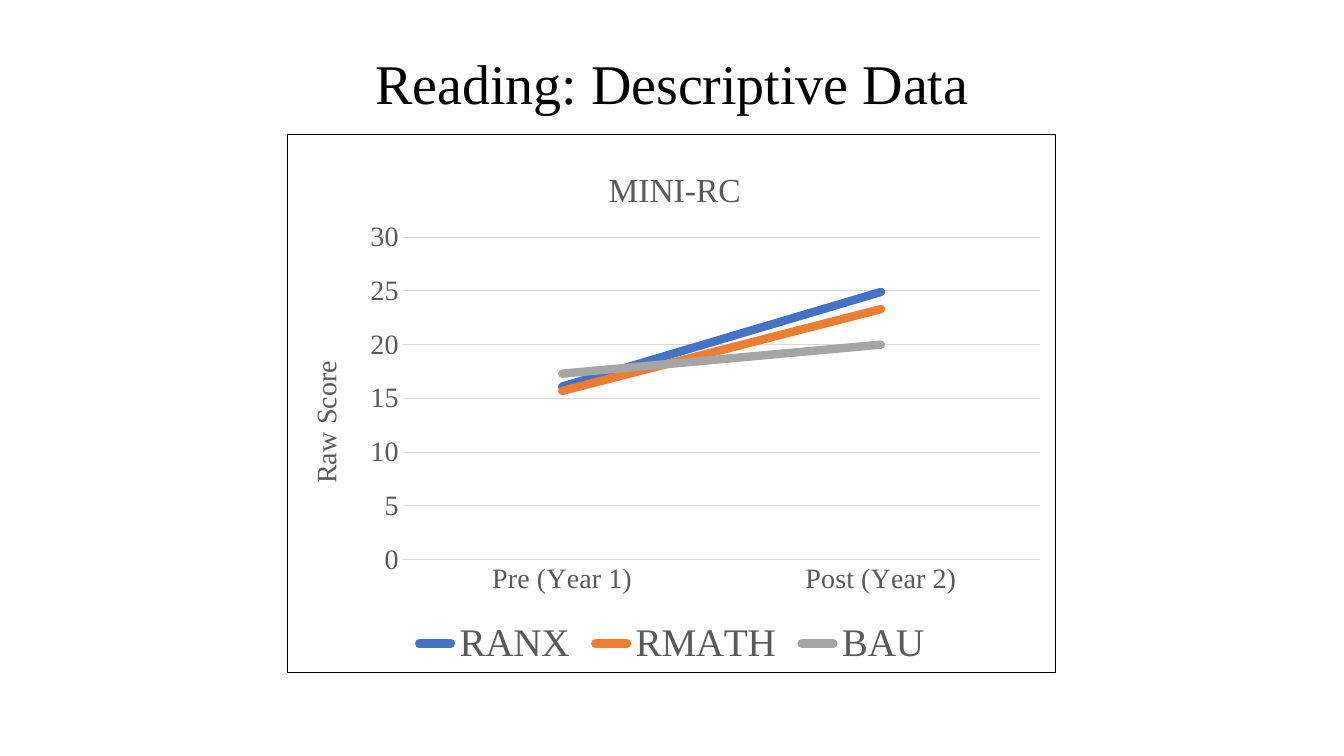
from dataclasses import dataclass

from lxml import etree
from pptx import Presentation
from pptx.chart.data import CategoryChartData
from pptx.dml.color import RGBColor
from pptx.enum import chart as ch, text
from pptx.oxml import ns, parse_xml
from pptx.util import Pt


@dataclass(frozen=True)
class Theme:
    font: str = "Times New Roman"
    black: str = "000000"
    label: str = "595959"
    grid: str = "D9D9D9"
    series: tuple = ("4472C4", "ED7D31", "A5A5A5")
    title_size: int = 40
    chart_title_size: int = 24
    axis_size: int = 20
    legend_size: int = 28
    thin: float = 0.75
    thick: float = 6


THEME = Theme()
CATEGORIES = ("Pre (Year 1)", "Post (Year 2)")
SCORES = {"RANX": (16.1, 24.9), "RMATH": (15.7, 23.3), "BAU": (17.3, 20)}


def style_font(font, size, color):
    font.name = THEME.font
    font.size = Pt(size)
    font.bold = False
    font.color.rgb = RGBColor.from_string(color)


def style_line(line, color, width):
    line.color.rgb = RGBColor.from_string(color)
    line.width = Pt(width)


def set_layout(parent, index, inner=False, **fractions):
    """Place a chart part by fractions (x, y, w, h) of the chart's size."""
    for old in parent.findall(ns.qn("c:layout")):
        parent.remove(old)
    layout = etree.Element(ns.qn("c:layout"))
    manual = etree.SubElement(layout, ns.qn("c:manualLayout"))
    settings = {"layoutTarget": "inner"} if inner else {}
    settings.update(xMode="edge", yMode="edge", **fractions)
    for name, value in settings.items():
        etree.SubElement(manual, ns.qn(f"c:{name}")).set("val", str(value))
    parent.insert(index, layout)


def add_heading(owner, words, size, x, y):
    """Give a chart or axis a title at a fixed place."""
    tf = owner.text_frame
    tf.text = words
    style_font(tf.paragraphs[0].font, size, THEME.label)
    set_layout(tf._txBody.getparent().getparent(), 1, x=x, y=y)


def add_border(chart):
    border = parse_xml(
        f'<c:spPr {ns.nsdecls("c", "a")}><a:noFill/><a:ln w="{Pt(THEME.thin)}">'
        f'<a:solidFill><a:srgbClr val="{THEME.black}"/></a:solidFill></a:ln></c:spPr>')
    chart._chartSpace.find(ns.qn("c:chart")).addnext(border)


def style_axes(chart):
    for axis in (chart.category_axis, chart.value_axis):
        axis.major_tick_mark = axis.minor_tick_mark = ch.XL_TICK_MARK.NONE
        style_font(axis.tick_labels.font, THEME.axis_size, THEME.label)
    style_line(chart.category_axis.format.line, THEME.grid, THEME.thin)
    values = chart.value_axis
    values.format.line.fill.background()
    values.minimum_scale, values.maximum_scale, values.major_unit = 0, 30, 5
    style_line(values.major_gridlines.format.line, THEME.grid, THEME.thin)
    add_heading(values.axis_title, "Raw Score", THEME.axis_size, 0.02, 0.41)


def add_title(slide, left, top, width, height):
    s = slide.shapes.title
    s.left, s.top, s.width, s.height = left, top, width, height
    tf = s.text_frame
    tf.text = "Reading: Descriptive Data"
    tf.vertical_anchor = text.MSO_ANCHOR.MIDDLE
    p = tf.paragraphs[0]
    p.alignment = text.PP_ALIGN.CENTER
    p.line_spacing = 0.9
    style_font(p.font, THEME.title_size, THEME.black)


def add_score_chart(slide, left, top, width, height):
    data = CategoryChartData()
    data.categories = CATEGORIES
    for name, scores in SCORES.items():
        data.add_series(name, scores)
    chart = slide.shapes.add_chart(
        ch.XL_CHART_TYPE.LINE, left, top, width, height, data).chart
    style_font(chart.font, THEME.axis_size, THEME.black)
    add_border(chart)
    add_heading(chart.chart_title, "MINI-RC", THEME.chart_title_size, 0.41, 0.05)
    style_axes(chart)

    plot = chart.plots[0]
    plot.vary_by_categories = False
    for series, color in zip(plot.series, THEME.series):
        series.smooth = False
        series.marker.style = ch.XL_MARKER_STYLE.NONE
        style_line(series.format.line, color, THEME.thick)
        series._element.find(f".//{ns.qn('a:ln')}").set("cap", "rnd")
    set_layout(chart._chartSpace.chart.plotArea, 0, inner=True,
               x=0.15, y=0.19, w=0.83, h=0.6)

    chart.has_legend = True
    chart.legend.position = ch.XL_LEGEND_POSITION.BOTTOM
    chart.legend.include_in_layout = False
    style_font(chart.legend.font, THEME.legend_size, THEME.label)


def main():
    prs = Presentation()
    prs.slide_width, prs.slide_height = Pt(960), Pt(540)
    slide = prs.slides.add_slide(prs.slide_layouts.get_by_name("Title Only"))
    add_title(slide, Pt(66), Pt(9.5), Pt(828), Pt(104.5))
    add_score_chart(slide, Pt(205), Pt(96), Pt(549.5), Pt(385))
    prs.save("out.pptx")


if __name__ == "__main__":
    main()
